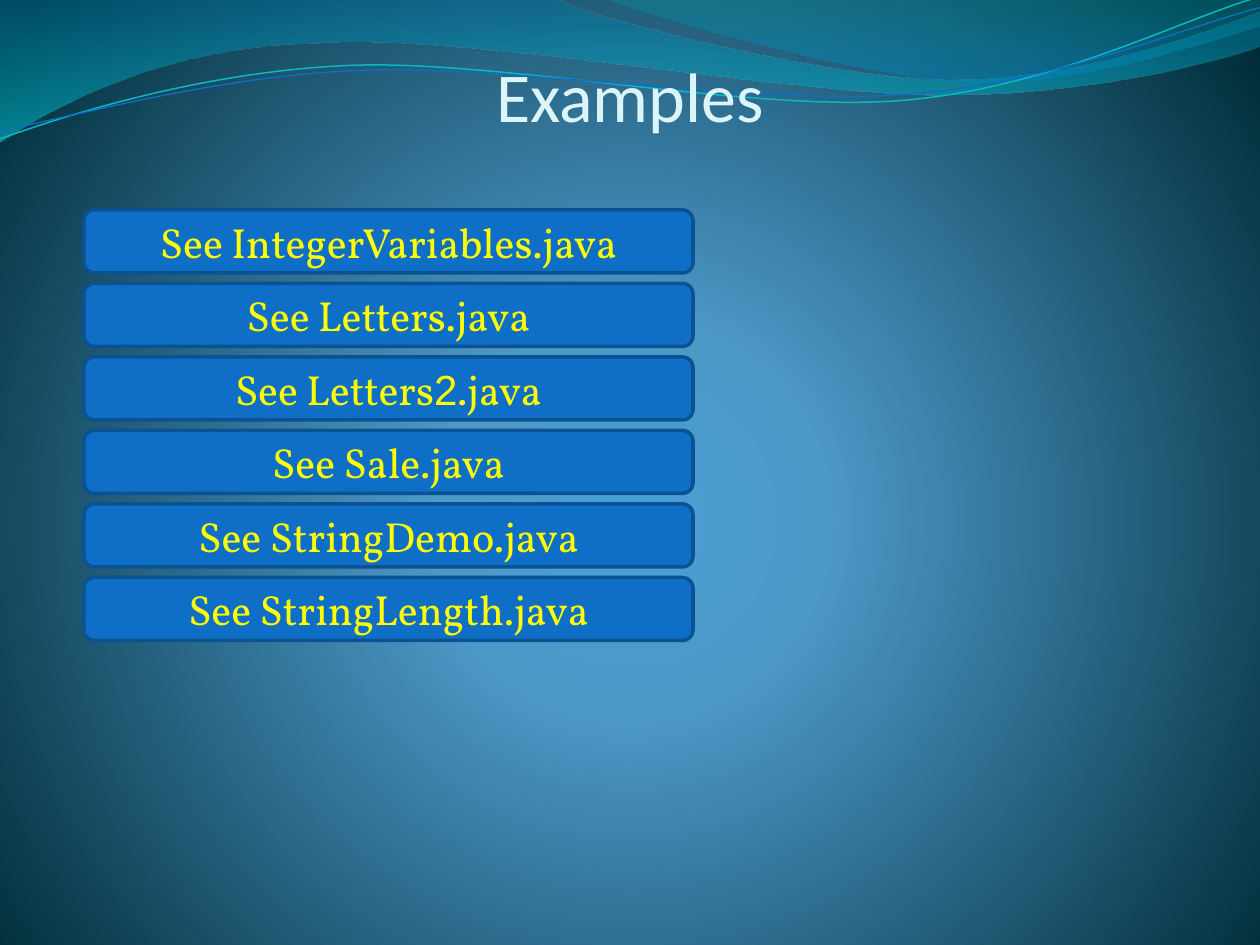
from itertools import groupby

from lxml import etree
from pptx import Presentation, util as u
from pptx.dml.color import RGBColor
from pptx.enum import shapes, text as t
from pptx.oxml import ns, parse_xml

TITLE_COLOR = RGBColor(0xDB, 0xF5, 0xF9)
BUTTON_FILL = RGBColor(0x0F, 0x6F, 0xC6)
BUTTON_LINE = RGBColor(0x0B, 0x52, 0x92)
BUTTON_TEXT = RGBColor(0xFF, 0xFF, 0x00)
TEAL = RGBColor(0x0A, 0xB8, 0xBF)
SKY = RGBColor(0x4A, 0xA0, 0xD6)
STEEL = RGBColor(0x4C, 0x98, 0xC7)
NIGHT = RGBColor(0x00, 0x2C, 0x38)
DEEP_BLUE = RGBColor(0x00, 0x74, 0xA1)
CYAN = RGBColor(0x00, 0xC6, 0xCF)
SEA = RGBColor(0x00, 0xA1, 0xA9)
OCEAN = RGBColor(0x00, 0x8B, 0xBF)
DOWNWARD = '<a:lin ang="5400000" scaled="0"/>'
RADIAL = ('<a:path path="circle"><a:fillToRect l="10000" t="110000" '
          'r="10000" b="100000"/></a:path>')


def set_gradient(properties, stops, direction):
    stop_xml = "".join(
        f'<a:gs pos="{position * 1000}"><a:srgbClr val="{color}">'
        f'<a:alpha val="{opacity * 1000}"/></a:srgbClr></a:gs>'
        for position, color, opacity in stops)
    gradient = parse_xml(
        f'<a:gradFill {ns.nsdecls("a")} rotWithShape="1">'
        f'<a:gsLst>{stop_xml}</a:gsLst>{direction}</a:gradFill>')
    properties.replace(properties.find(ns.qn("a:solidFill")), gradient)


def write_text(shape, text, *, font, size, color, anchor, digit_font=None):
    frame = shape.text_frame
    frame.word_wrap = True
    frame.vertical_anchor = anchor
    paragraph = frame.paragraphs[0]
    paragraph.alignment = t.PP_ALIGN.CENTER
    for is_digit, letters in groupby(text, str.isdigit):
        run = paragraph.add_run()
        run.text = "".join(letters)
        run.font.name = digit_font if is_digit and digit_font else font
        run.font.size = u.Pt(size)
        run.font.color.rgb = color


presentation = Presentation()
presentation.slide_width = u.Inches(10)
presentation.slide_height = u.Inches(7.5)
column = presentation.slide_width // 60
row = presentation.slide_height // 45
hundredth = presentation.slide_width // 1000
slide = presentation.slides.add_slide(presentation.slide_layouts[6])

slide.background.fill.solid()
slide.background.fill.fore_color.rgb = NIGHT
set_gradient(slide.element.find(".//" + ns.qn("p:bgPr")),
             [(0, SKY, 100), (25, STEEL, 100), (100, NIGHT, 100)], RADIAL)

WAVES = [
    ((0, 0),
     [(440, -1), (476, 17, 664, 63, 758, 63), (853, 63, 958, 26, 1000, 9),
      (1001, 36), (983, 44, 870, 76, 746, 75), (622, 75, 382, 28, 257, 34),
      (129, 36, 46, 83, -1, 113)],
     [(0, DEEP_BLUE, 45), (100, CYAN, 55)], None, 0),
    ((479, -1),
     [(509, 11, 682, 62, 769, 65), (856, 69, 961, 32, 1000, 21), (1000, 0)],
     [(0, SEA, 30), (80, OCEAN, 45)], None, 0),
    ((-2, 111),
     [(48, 93, 158, 57, 277, 52), (395, 47, 593, 89, 713, 80),
      (833, 71, 938, 15, 998, -2)], None, TEAL, 0.85),
    ((-2, 104),
     [(47, 96, 164, 61, 283, 56), (403, 51, 597, 84, 717, 75),
      (836, 67, 941, 21, 1000, 6)], None, BUTTON_FILL, 0.75),
]
for start, segments, stops, line_color, line_width in WAVES:
    builder = slide.shapes.build_freeform(*start, scale=hundredth)
    for segment in segments:
        builder.add_line_segments(list(zip(segment[::2], segment[1::2])), close=False)
    if stops:
        builder.add_line_segments([start], close=True)
    wave = builder.convert_to_shape()
    wave.shadow.inherit = False
    lines = iter(wave.element.findall(".//" + ns.qn("a:lnTo")))
    for segment in segments:
        first = next(lines)
        if len(segment) == 6:
            curve = etree.Element(ns.qn("a:cubicBezTo"))
            first.addprevious(curve)
            for corner in (first, next(lines), next(lines)):
                curve.append(corner[0])
                corner.getparent().remove(corner)
    if stops:
        wave.fill.solid()
        wave.fill.fore_color.rgb = stops[0][1]
        set_gradient(wave.element.spPr, stops, DOWNWARD)
        wave.line.fill.background()
    else:
        wave.fill.background()
        wave.line.color.rgb = line_color
        wave.line.width = u.Pt(line_width)

title = slide.shapes.add_textbox(3 * column, int(1.5 * row), 54 * column, 5 * row)
title.text_frame.margin_left = title.text_frame.margin_right = 0
title.text_frame.margin_bottom = 0
write_text(title, "Examples", font="Calibri", size=40, color=TITLE_COLOR,
           anchor=t.MSO_ANCHOR.BOTTOM)

EXAMPLES = ["IntegerVariables", "Letters", "Letters2", "Sale", "StringDemo", "StringLength"]
for index, example in enumerate(EXAMPLES):
    button = slide.shapes.add_shape(
        shapes.MSO_SHAPE.ROUNDED_RECTANGLE,
        4 * column, int((10 + 3.5 * index) * row), 29 * column, 3 * row)
    button.shadow.inherit = False
    button.fill.solid()
    button.fill.fore_color.rgb = BUTTON_FILL
    button.line.color.rgb = BUTTON_LINE
    button.line.width = u.Pt(2)
    write_text(button, f"See {example}.java", font="Vollkorn", size=24, color=BUTTON_TEXT,
               anchor=t.MSO_ANCHOR.MIDDLE, digit_font="Arial")

presentation.save("out.pptx")
